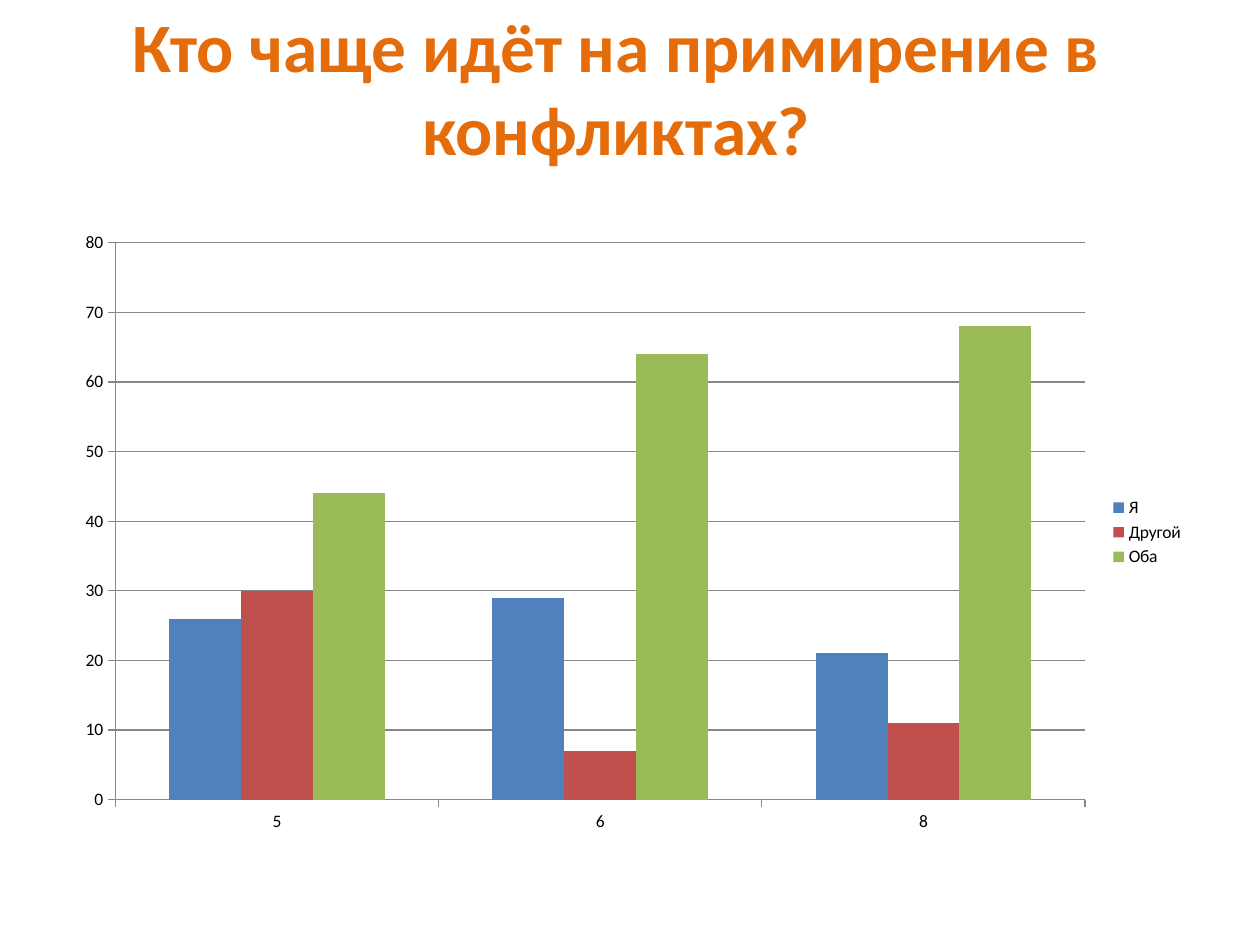
import pptx
import pptx.chart.data
import pptx.dml.color
import pptx.enum.chart
import pptx.enum.text
import pptx.util

Pt = pptx.util.Pt


def rgb(value):
    return pptx.dml.color.RGBColor.from_string(value)


prs = pptx.Presentation()
prs.slide_width, prs.slide_height = Pt(720), Pt(540)
s = prs.slides.add_slide(prs.slide_layouts[5])

# Title, raised by a deep bottom margin
title = s.shapes.title
title.left, title.top, title.width, title.height = Pt(22.5), Pt(22.5), Pt(659.5), Pt(101.5)
tf = title.text_frame
frame_format = {
    "word_wrap": True,
    "auto_size": pptx.enum.text.MSO_AUTO_SIZE.NONE,
    "vertical_anchor": pptx.enum.text.MSO_ANCHOR.MIDDLE,
    "margin_bottom": Pt(52),
}
for name, value in frame_format.items():
    setattr(tf, name, value)
p = tf.paragraphs[0]
p.alignment = pptx.enum.text.PP_ALIGN.CENTER
r = p.add_run()
r.text = "Кто чаще идёт на примирение в конфликтах?"
for name, value in {"name": "Calibri", "size": Pt(39.6), "bold": True}.items():
    setattr(r.font, name, value)
r.font.color.rgb = rgb("E46C0A")

# Chart data
answers = [
    ("Я", (26, 29, 21), "4F81BD"),
    ("Другой", (30, 7, 11), "C0504D"),
    ("Оба", (44, 64, 68), "9BBB59"),
]
data = pptx.chart.data.CategoryChartData()
data.categories = ["5", "6", "8"]
for name, values, color in answers:
    data.add_series(name, values)

# Column chart
chart = s.shapes.add_chart(
    pptx.enum.chart.XL_CHART_TYPE.COLUMN_CLUSTERED,
    Pt(36), Pt(126), Pt(648), Pt(356.4), data,
).chart
chart.has_title = False
chart.font.name = "Calibri"
chart.font.size = Pt(10)
chart.font.color.rgb = rgb("000000")
plot = chart.plots[0]
for name, value in {"gap_width": 150, "overlap": 0, "vary_by_categories": False}.items():
    setattr(plot, name, value)
for series, (name, values, color) in zip(plot.series, answers):
    series.format.fill.solid()
    series.format.fill.fore_color.rgb = rgb(color)

# Axes and gridlines
value_axis = chart.value_axis
value_format = {
    "minimum_scale": 0,
    "maximum_scale": 80,
    "major_unit": 10,
    "has_major_gridlines": True,
}
for name, value in value_format.items():
    setattr(value_axis, name, value)
for axis in (chart.category_axis, value_axis):
    axis.major_tick_mark = pptx.enum.chart.XL_TICK_MARK.OUTSIDE
for part in (chart.category_axis, value_axis, value_axis.major_gridlines):
    part.format.line.color.rgb = rgb("878787")
    part.format.line.width = Pt(0.75)

# Legend
chart.has_legend = True
chart.legend.position = pptx.enum.chart.XL_LEGEND_POSITION.RIGHT
chart.legend.include_in_layout = False

prs.save("out.pptx")
